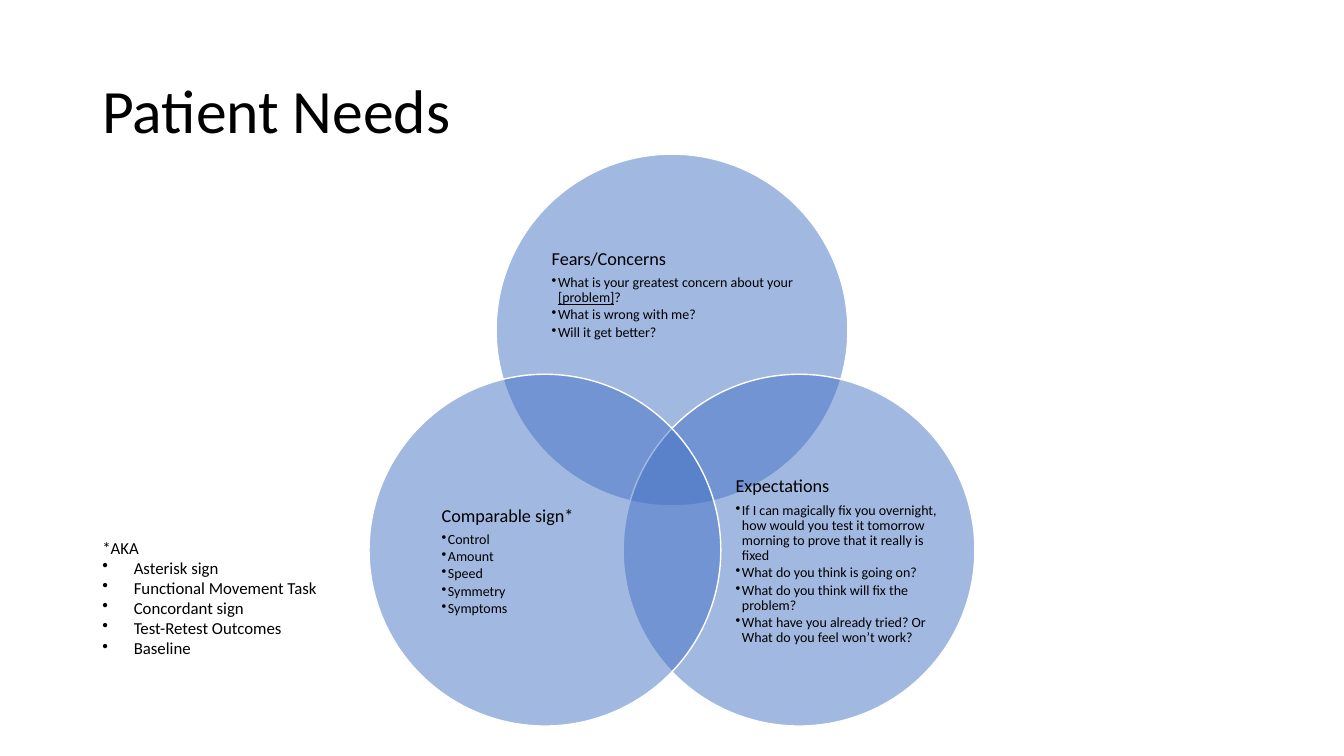
"""Build the Patient Needs slide: a three-circle Venn diagram with a side note."""
from dataclasses import dataclass
from math import cos, radians, sin
from typing import Any

from lxml.etree import SubElement
from pptx import Presentation
from pptx.dml.color import RGBColor
from pptx.enum.shapes import MSO_SHAPE as Shape
from pptx.enum.text import MSO_ANCHOR as Anchor, MSO_AUTO_SIZE as AutoSize
from pptx.oxml.ns import qn
from pptx.util import Pt


@dataclass(frozen=True)
class Theme:
    font: str = "Calibri"
    text: RGBColor = RGBColor.from_string("000000")
    circle: RGBColor = RGBColor.from_string("4472C4")
    outline: RGBColor = RGBColor.from_string("FFFFFF")
    circle_alpha: int = 50000
    title_size: float = 44
    heading_size: float = 13
    bullet_size: float = 10
    note_size: float = 12


@dataclass(frozen=True)
class Box:
    left: float
    top: float
    width: float
    height: float

    def lengths(self) -> tuple[Pt, ...]:
        return Pt(self.left), Pt(self.top), Pt(self.width), Pt(self.height)


@dataclass(frozen=True)
class Line:
    text: str
    size: float
    indent: float = 0
    level: int = 0
    spacing: float = 1.0
    after: float = 0
    underlined: str = ""


@dataclass(frozen=True)
class Need:
    angle: float
    box: Box
    heading: str
    questions: tuple[str, ...]
    underlined: str = ""


THEME = Theme()
CENTER_X, CENTER_Y = 480, 340.56
CENTER_DISTANCE = 104.8
DIAMETER = 251.3
NO_INSETS = dict.fromkeys(("margin_left", "margin_top", "margin_right", "margin_bottom"), 0)

NEEDS = (
    Need(0, Box(388.1, 154.1, 184.3, 113), "Fears/Concerns", (
        "What is your greatest concern about your [problem]?",
        "What is wrong with me?",
        "Will it get better?",
    ), underlined="[problem]"),
    Need(120, Box(522, 331.9, 150.5, 138.2), "Expectations", (
        "If I can magically fix you overnight, how would you test it tomorrow "
        "morning to prove that it really is fixed",
        "What do you think is going on?",
        "What do you think will fix the problem?",
        "What have you already tried? Or What do you feel won’t work?",
    )),
    Need(240, Box(287.3, 331.9, 150.5, 138.2), "Comparable sign*", (
        "Control", "Amount", "Speed", "Symmetry", "Symptoms",
    )),
)
OTHER_NAMES = (
    "Asterisk sign", "Functional Movement Task", "Concordant sign",
    "Test-Retest Outcomes", "Baseline",
)


def apply_format(target: Any, values: dict[str, Any]) -> None:
    for name, value in values.items():
        setattr(target, name, value)


def add_run(paragraph: Any, text: str, size: float, underline: bool) -> None:
    run = paragraph.add_run()
    run.text = text
    apply_format(run.font, {"name": THEME.font, "size": Pt(size)})
    run.font.color.rgb = THEME.text
    if underline:
        run.font.underline = True


def write_line(paragraph: Any, line: Line) -> None:
    apply_format(paragraph, {
        "level": line.level,
        "line_spacing": line.spacing,
        "space_after": Pt(line.after),
    })
    if line.indent:
        properties = paragraph._p.get_or_add_pPr()
        properties.set("marL", str(Pt(line.indent)))
        properties.set("indent", str(-Pt(line.indent)))
        SubElement(properties, qn("a:buChar"), char="•")
    pieces = line.text.partition(line.underlined) if line.underlined else (line.text,)
    for piece in pieces:
        if piece:
            add_run(paragraph, piece, line.size, piece == line.underlined)


def add_text(shapes: Any, box: Box, lines: list[Line], frame_format: dict[str, Any]) -> Any:
    frame = shapes.add_textbox(*box.lengths()).text_frame
    apply_format(frame, frame_format)
    for index, line in enumerate(lines):
        write_line(frame.add_paragraph() if index else frame.paragraphs[0], line)
    return frame


def add_circle(shapes: Any, angle: float) -> None:
    left = CENTER_X + CENTER_DISTANCE * sin(radians(angle)) - DIAMETER / 2
    top = CENTER_Y - CENTER_DISTANCE * cos(radians(angle)) - DIAMETER / 2
    circle = shapes.add_shape(Shape.OVAL, *Box(left, top, DIAMETER, DIAMETER).lengths())
    circle.shadow.inherit = False
    circle.fill.solid()
    circle.fill.fore_color.rgb = THEME.circle
    color = next(circle.element.spPr.iter(qn("a:srgbClr")))
    SubElement(color, qn("a:alpha"), val=str(THEME.circle_alpha))
    circle.line.color.rgb = THEME.outline
    circle.line.width = Pt(1)


def add_need(shapes: Any, need: Need) -> None:
    add_circle(shapes, need.angle)
    heading = Line(need.heading, THEME.heading_size, spacing=0.9, after=4.55)
    questions = [
        Line(question, THEME.bullet_size, indent=4.5, level=1, spacing=0.9,
             after=1.5, underlined=need.underlined)
        for question in need.questions
    ]
    frame = add_text(shapes, need.box, [heading, *questions], {
        "word_wrap": True, "vertical_anchor": Anchor.MIDDLE, **NO_INSETS,
    })
    frame._txBody.bodyPr.set("anchorCtr", "1")


def main() -> None:
    presentation = Presentation()
    apply_format(presentation, {"slide_width": Pt(960), "slide_height": Pt(540)})
    slide = presentation.slides.add_slide(presentation.slide_layouts[6])

    add_text(slide.shapes, Box(66, 28.8, 828, 104.4),
             [Line("Patient Needs", THEME.title_size, spacing=0.9)],
             {"word_wrap": True, "vertical_anchor": Anchor.MIDDLE})

    diagram = slide.shapes.add_group_shape()
    for need in NEEDS:
        add_need(diagram.shapes, need)

    names = [Line(name, THEME.note_size, indent=22.5) for name in OTHER_NAMES]
    add_text(slide.shapes, Box(66, 380.2, 169.9, 94.3),
             [Line("*AKA", THEME.note_size), *names],
             {"word_wrap": False, "auto_size": AutoSize.SHAPE_TO_FIT_TEXT})

    presentation.save("out.pptx")


if __name__ == "__main__":
    main()
